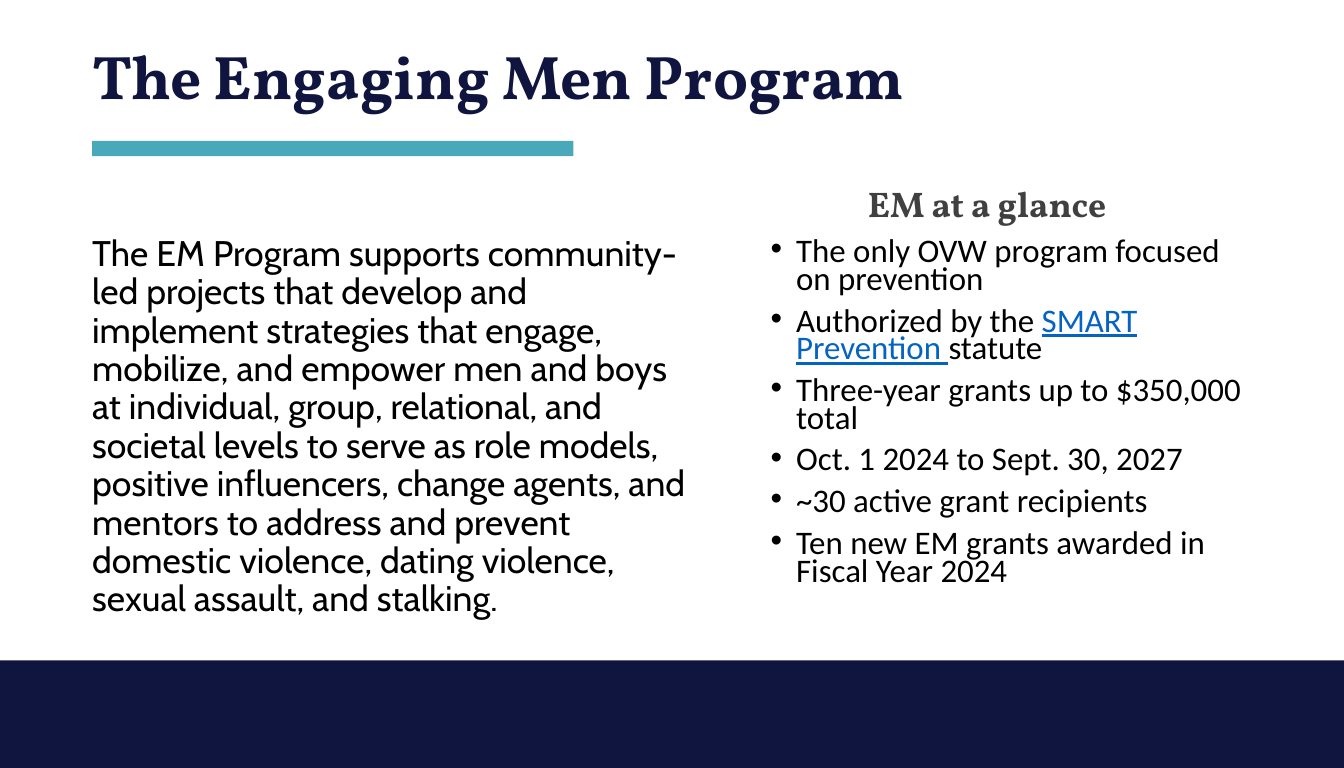
import pptx
import pptx.util
import pptx.dml.color
import pptx.enum.shapes
import pptx.enum.text
import lxml.etree
from pptx.util import Inches, Pt

COLORS = {"navy": "0F153E", "teal": "4AA8BB", "gray": "404040",
          "black": "000000", "link": "0563C1"}

TITLE = "The Engaging Men Program"
SUMMARY = (
    "The EM Program supports community-led projects that develop and implement "
    "strategies that engage, mobilize, and empower men and boys at individual, "
    "group, relational, and societal levels to serve as role models, positive "
    "influencers, change agents, and mentors to address and prevent domestic "
    "violence, dating violence, sexual assault, and stalking."
)
GLANCE_HEADING = "EM at a glance"
# Each bullet is a list of (text, is_link) spans
GLANCE = [
    [("The only OVW program focused on prevention", False)],
    [("Authorized by the ", False), ("SMART Prevention ", True), ("statute", False)],
    [("Three-year grants up to $350,000 total", False)],
    [("Oct. 1 2024 to Sept. 30, 2027", False)],
    [("~30 active grant recipients", False)],
    [("Ten new EM grants awarded in Fiscal Year 2024", False)],
]
# Placeholder index: (area, anchor, font, size, bold, color, line spacing, bullets, content)
ANCHOR = pptx.enum.text.MSO_ANCHOR
TEXTS = {
    0: ((0.64, 0.32, 9.14, 1.16), ANCHOR.TOP, "Vollkorn", 34.6, True, "navy", 0.9,
        False, [[(TITLE, False)]]),
    1: ((0.64, 1.8, 4.92, 3.27), ANCHOR.TOP, "Cabin", 20, False, "black", 0.9,
        False, [[(SUMMARY, False)]]),
    3: ((6.7, 1.32, 2.22, 0.48), ANCHOR.BOTTOM, "Vollkorn", 20, True, "gray", 0.9,
        False, [[(GLANCE_HEADING, False)]]),
    4: ((5.94, 1.84, 3.99, 2.95), ANCHOR.TOP, "Calibri", 18.5, False, "black", 0.7,
        True, GLANCE),
}
BARS = [((0, 5.16, 10.5, 0.92), "navy"), ((0.72, 1.1, 3.76, 0.12), "teal")]


def rgb(name):
    return pptx.dml.color.RGBColor.from_string(COLORS[name])


def set_bullet(para, bulleted):
    properties = para._p.get_or_add_pPr()
    indent = Inches(0.2) if bulleted else 0
    properties.set("marL", str(indent))
    properties.set("indent", str(-indent))
    tag = "a:buChar" if bulleted else "a:buNone"
    bullet = lxml.etree.SubElement(properties, pptx.oxml.ns.qn(tag))
    if bulleted:
        bullet.set("char", "•")


def fill_placeholder(box, area, anchor, font, size, bold, color, spacing, bulleted, content):
    box.left, box.top, box.width, box.height = map(Inches, area)
    frame = box.text_frame
    frame.word_wrap = True
    frame.auto_size = pptx.enum.text.MSO_AUTO_SIZE.NONE
    frame.vertical_anchor = anchor
    frame.margin_left = frame.margin_right = Inches(0.08)
    frame.margin_top = frame.margin_bottom = Inches(0.04)
    for number, spans in enumerate(content):
        para = frame.add_paragraph() if number else frame.paragraphs[0]
        set_bullet(para, bulleted)
        para.alignment = pptx.enum.text.PP_ALIGN.LEFT
        para.line_spacing = spacing
        para.space_before = Pt(7.9 if number else 0)
        para.space_after = Pt(0)
        for text, is_link in spans:
            span = para.add_run()
            span.text = text
            span.font.name = font
            span.font.size = Pt(size)
            span.font.bold = bold
            span.font.underline = is_link
            span.font.color.rgb = rgb("link" if is_link else color)


deck = pptx.Presentation()
deck.slide_width, deck.slide_height = Inches(10.5), Inches(6)
slide = deck.slides.add_slide(deck.slide_layouts.get_by_name("Comparison"))

# Title, summary and at-a-glance list
for box in list(slide.placeholders):
    index = box.placeholder_format.idx
    if index in TEXTS:
        fill_placeholder(box, *TEXTS[index])
    else:
        box.element.getparent().remove(box.element)

# Footer band and title rule
for area, color in BARS:
    bar = slide.shapes.add_shape(pptx.enum.shapes.MSO_SHAPE.RECTANGLE, *map(Inches, area))
    bar.shadow.inherit = False
    bar.fill.solid()
    bar.fill.fore_color.rgb = rgb(color)
    bar.line.fill.background()

deck.save("out.pptx")
